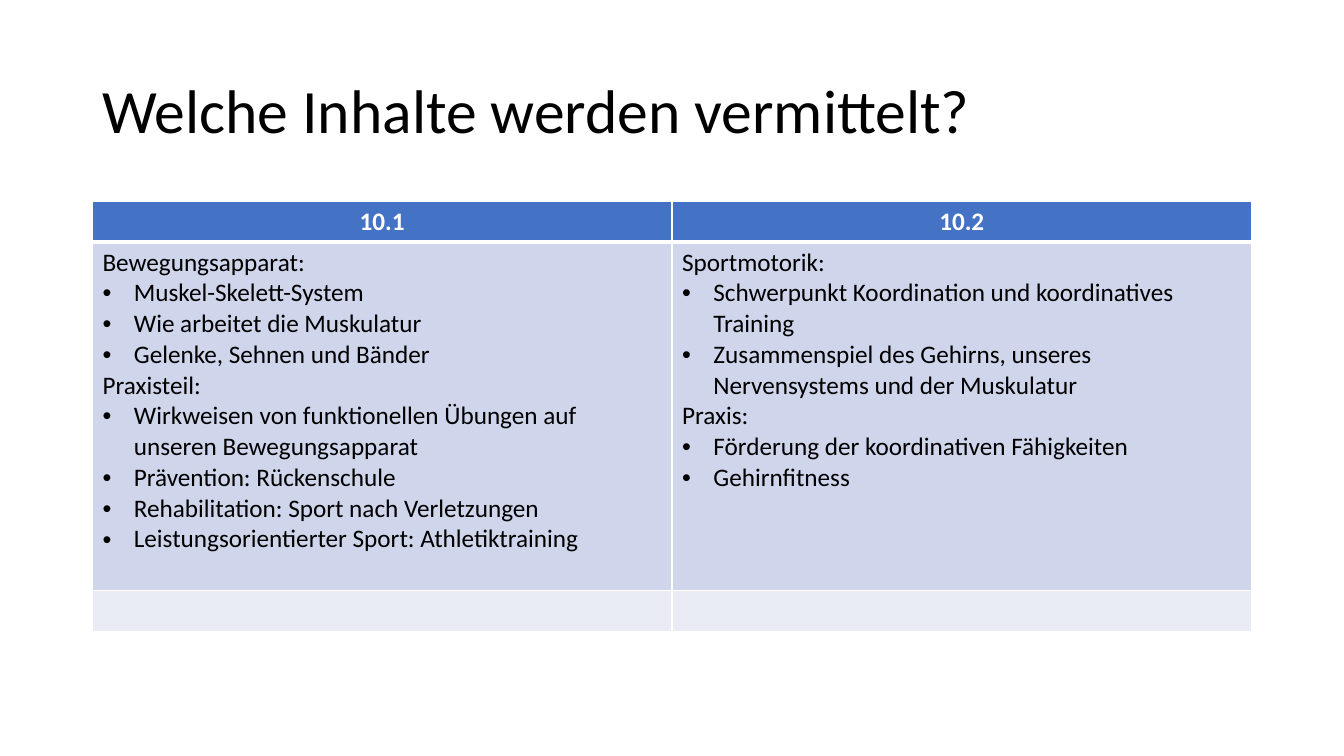
from lxml import etree
from pptx import Presentation
from pptx.dml.color import RGBColor
from pptx.enum import text
from pptx.oxml import ns
from pptx.util import Cm, Pt

FONT = "Calibri"
BLACK = RGBColor(0x00, 0x00, 0x00)
WHITE = RGBColor(0xFF, 0xFF, 0xFF)
BLUE = RGBColor(0x44, 0x72, 0xC4)
BAND = RGBColor(0xCF, 0xD5, 0xEA)
PALE = RGBColor(0xE9, 0xEB, 0xF5)

# Each topic: heading line and its bullet points
TERMS = {
    "10.1": [
        ("Bewegungsapparat:", [
            "Muskel-Skelett-System",
            "Wie arbeitet die Muskulatur",
            "Gelenke, Sehnen und Bänder",
        ]),
        ("Praxisteil:", [
            "Wirkweisen von funktionellen Übungen auf unseren Bewegungsapparat",
            "Prävention: Rückenschule",
            "Rehabilitation: Sport nach Verletzungen",
            "Leistungsorientierter Sport: Athletiktraining",
        ]),
    ],
    "10.2": [
        ("Sportmotorik:", [
            "Schwerpunkt Koordination und koordinatives Training",
            "Zusammenspiel des Gehirns, unseres Nervensystems und der Muskulatur",
        ]),
        ("Praxis:", [
            "Förderung der koordinativen Fähigkeiten",
            "Gehirnfitness",
        ]),
    ],
}


def add_run(para, words, size, color, bold=False):
    run = para.add_run()
    run.text = words
    font = run.font
    font.name, font.size, font.bold = FONT, Pt(size), bold
    font.color.rgb = color


def add_dot(para):
    props = para._p.get_or_add_pPr()
    props.set("marL", str(Cm(0.79)))
    props.set("indent", str(-Cm(0.79)))
    etree.SubElement(props, ns.qn("a:buFont"), typeface="Arial")
    etree.SubElement(props, ns.qn("a:buChar"), char="•")


def set_cell(cell, color, top=1, base=1):
    # Borders come before the fill in the cell properties
    props = cell._tc.get_or_add_tcPr()
    for side, width in (("L", 1), ("R", 1), ("T", top), ("B", base)):
        line = etree.SubElement(props, ns.qn("a:ln" + side), w=str(Pt(width)))
        fill = etree.SubElement(line, ns.qn("a:solidFill"))
        etree.SubElement(fill, ns.qn("a:srgbClr"), val=str(WHITE))
    cell.fill.solid()
    cell.fill.fore_color.rgb = color


def add_title(slide, left, top, width, height):
    frame = slide.shapes.add_textbox(left, top, width, height).text_frame
    frame.word_wrap = True
    frame.vertical_anchor = text.MSO_ANCHOR.MIDDLE
    para = frame.paragraphs[0]
    para.line_spacing = 0.9
    add_run(para, "Welche Inhalte werden vermittelt?", 44, BLACK)


def fill_topics(frame, topics):
    para = frame.paragraphs[0]
    for num, (head, points) in enumerate(topics):
        if num:
            para = frame.add_paragraph()
        add_run(para, head, 18, BLACK)
        for point in points:
            para = frame.add_paragraph()
            add_dot(para)
            add_run(para, point, 18, BLACK)


def add_terms(slide, left, top, width, height):
    table = slide.shapes.add_table(3, len(TERMS), left, top, width, height).table
    edge = Cm(1.03)
    for row, tall in zip(table.rows, (edge, height - 2 * edge, edge)):
        row.height = tall
    for col, (term, topics) in enumerate(TERMS.items()):
        head, body, foot = (table.cell(row, col) for row in range(3))
        # Header
        set_cell(head, BLUE, base=3)
        para = head.text_frame.paragraphs[0]
        para.alignment = text.PP_ALIGN.CENTER
        add_run(para, term, 18, WHITE, bold=True)
        # Topics and empty last row
        set_cell(body, BAND, top=3)
        fill_topics(body.text_frame, topics)
        set_cell(foot, PALE)


def main():
    deck = Presentation()
    deck.slide_width, deck.slide_height = Cm(33.87), Cm(19.05)
    slide = deck.slides.add_slide(deck.slide_layouts[6])
    left, width = Cm(2.33), Cm(29.21)
    add_title(slide, left, Cm(1.01), width, Cm(3.68))
    add_terms(slide, left, Cm(5.07), width, Cm(10.84))
    deck.save("out.pptx")


if __name__ == "__main__":
    main()
